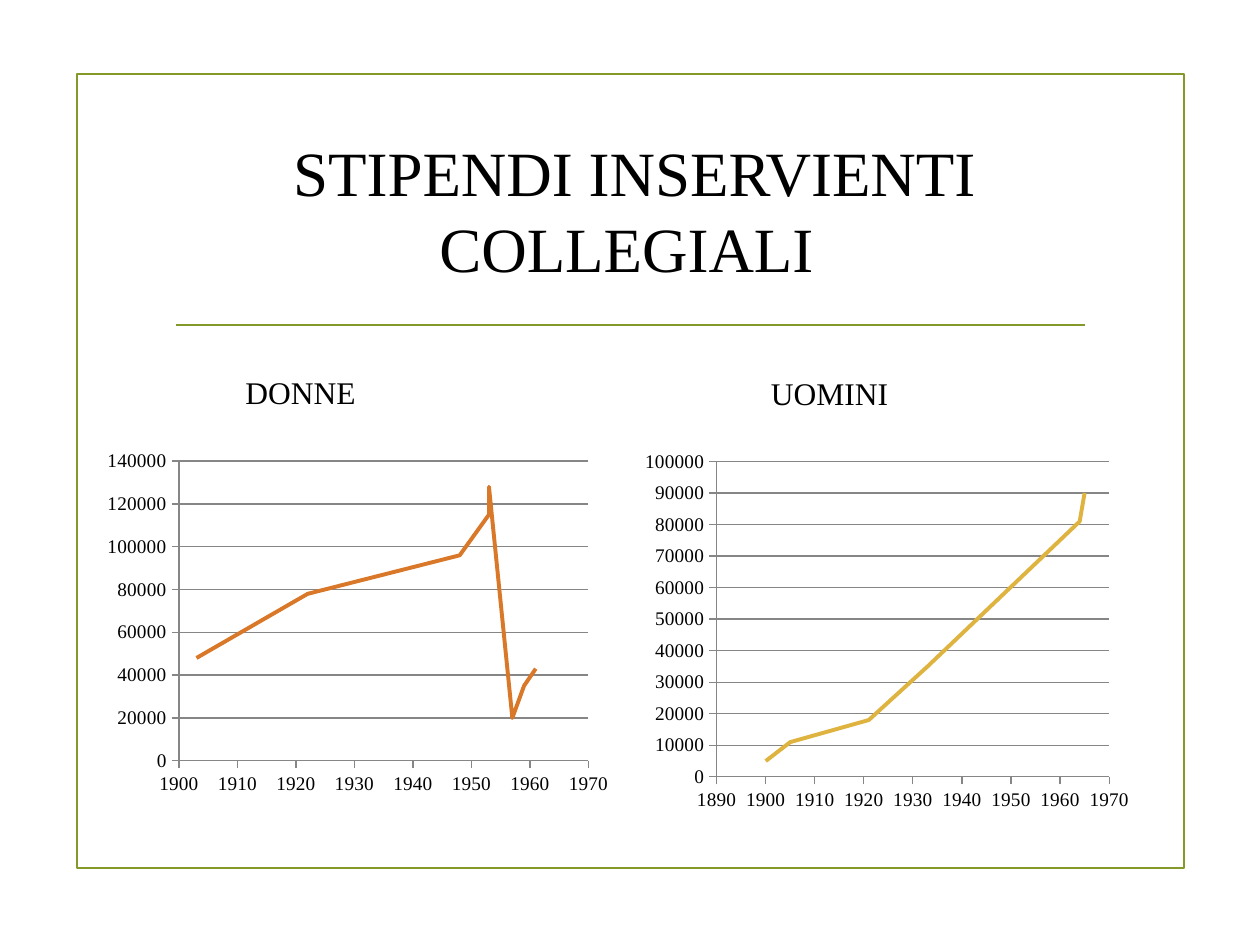
from dataclasses import dataclass

from lxml.etree import SubElement
from pptx import Presentation
from pptx.chart.data import XyChartData
from pptx.dml.color import RGBColor
from pptx.enum.chart import XL_CHART_TYPE as ChartType, XL_TICK_MARK as TickMark
from pptx.enum.shapes import MSO_CONNECTOR as Connector, MSO_SHAPE as Shape
from pptx.enum.text import MSO_AUTO_SIZE as AutoSize, PP_ALIGN as Align
from pptx.oxml.ns import qn
from pptx.slide import Slide
from pptx.util import Inches, Pt


@dataclass(frozen=True)
class Theme:
    font: str = "Times New Roman"
    text: RGBColor = RGBColor(0x00, 0x00, 0x00)
    accent: RGBColor = RGBColor(0x83, 0x99, 0x2A)
    women: RGBColor = RGBColor(0xD9, 0x78, 0x28)
    men: RGBColor = RGBColor(0xDE, 0xB3, 0x40)
    axis: RGBColor = RGBColor(0x86, 0x86, 0x86)
    title_size: Pt = Pt(36)
    heading_size: Pt = Pt(18)
    axis_size: Pt = Pt(11)
    border_width: Pt = Pt(1.25)
    curve_width: Pt = Pt(2.25)
    axis_width: Pt = Pt(0.75)


THEME = Theme()


@dataclass(frozen=True)
class Box:
    left: float
    top: float
    width: float
    height: float

    def lengths(self) -> tuple:
        return tuple(map(Inches, (self.left, self.top, self.width, self.height)))


@dataclass(frozen=True)
class AxisScale:
    low: int
    high: int
    step: int


@dataclass(frozen=True)
class SalaryPanel:
    heading: str
    heading_box: Box
    chart_box: Box
    color: RGBColor
    years: AxisScale
    pay: AxisScale
    points: tuple


PANELS = (
    SalaryPanel(
        "DONNE", Box(1.85, 2.91, 2.13, 0.4), Box(0.77, 3.52, 4.14, 2.84), THEME.women,
        AxisScale(1900, 1970, 10), AxisScale(0, 140000, 20000),
        ((1903, 48000), (1922, 78000), (1948, 96000), (1953, 115000),
         (1953, 128000), (1957, 20000), (1959, 35000), (1961, 43000)),
    ),
    SalaryPanel(
        "UOMINI", Box(6.02, 2.92, 2.2, 0.4), Box(5.04, 3.52, 4, 2.97), THEME.men,
        AxisScale(1890, 1970, 10), AxisScale(0, 100000, 10000),
        ((1900, 5000), (1905, 11000), (1921, 18000),
         (1933, 35000), (1964, 81000), (1965, 90000)),
    ),
)


def add_border(slide: Slide) -> None:
    border = slide.shapes.add_shape(Shape.RECTANGLE, *Box(0.61, 0.59, 8.79, 6.3).lengths())
    border.shadow.inherit = False
    border.fill.background()
    border.line.color.rgb = THEME.accent
    border.line.width = THEME.border_width


def add_divider(slide: Slide) -> None:
    divider = slide.shapes.add_connector(
        Connector.STRAIGHT, Inches(1.4), Inches(2.58), Inches(8.61), Inches(2.58))
    divider.line.color.rgb = THEME.accent
    divider.line.width = THEME.border_width
    SubElement(divider._element.spPr, qn("a:effectLst"))


def add_label(slide: Slide, wording: str, box: Box, size: Pt, align: Align) -> None:
    frame = slide.shapes.add_textbox(*box.lengths()).text_frame
    frame.word_wrap = True
    frame.auto_size = AutoSize.SHAPE_TO_FIT_TEXT
    frame.text = wording
    paragraph = frame.paragraphs[0]
    paragraph.alignment = align
    font = paragraph.runs[0].font
    font.name, font.size = THEME.font, size
    font.color.rgb = THEME.text


def style_axis(axis, scale: AxisScale, gridlines: bool) -> None:
    axis.minimum_scale, axis.maximum_scale = scale.low, scale.high
    axis.major_unit = scale.step
    axis.major_tick_mark, axis.minor_tick_mark = TickMark.OUTSIDE, TickMark.NONE
    axis.has_major_gridlines = gridlines
    axis.tick_labels.font.size = THEME.axis_size
    axis.tick_labels.number_format = "General"
    axis.tick_labels.number_format_is_linked = False
    lines = [axis.format.line]
    if gridlines:
        lines.append(axis.major_gridlines.format.line)
    for line in lines:
        line.color.rgb = THEME.axis
        line.width = THEME.axis_width


def add_salary_chart(slide: Slide, panel: SalaryPanel) -> None:
    salaries = XyChartData()
    series_data = salaries.add_series("Series 1")
    for year, pay in panel.points:
        series_data.add_data_point(year, pay)
    chart = slide.shapes.add_chart(
        ChartType.XY_SCATTER_SMOOTH_NO_MARKERS, *panel.chart_box.lengths(), salaries).chart
    chart.has_title = False
    chart.has_legend = False
    chart.font.name, chart.font.size = THEME.font, THEME.axis_size
    chart.font.color.rgb = THEME.text
    style_axis(chart.category_axis, panel.years, gridlines=False)
    style_axis(chart.value_axis, panel.pay, gridlines=True)
    plot = chart.plots[0]
    plot.vary_by_categories = False
    curve = plot.series[0]
    curve.format.line.color.rgb = panel.color
    curve.format.line.width = THEME.curve_width


def main() -> None:
    deck = Presentation()
    deck.slide_width, deck.slide_height = Inches(10), Inches(7.5)
    slide = deck.slides.add_slide(deck.slide_layouts[6])
    add_border(slide)
    add_divider(slide)
    add_label(slide, "STIPENDI INSERVIENTI COLLEGIALI ", Box(0.9, 1.01, 8.27, 1.31),
              THEME.title_size, Align.CENTER)
    for panel in PANELS:
        add_label(slide, panel.heading, panel.heading_box, THEME.heading_size, Align.LEFT)
        add_salary_chart(slide, panel)
    deck.save("out.pptx")


if __name__ == "__main__":
    main()
